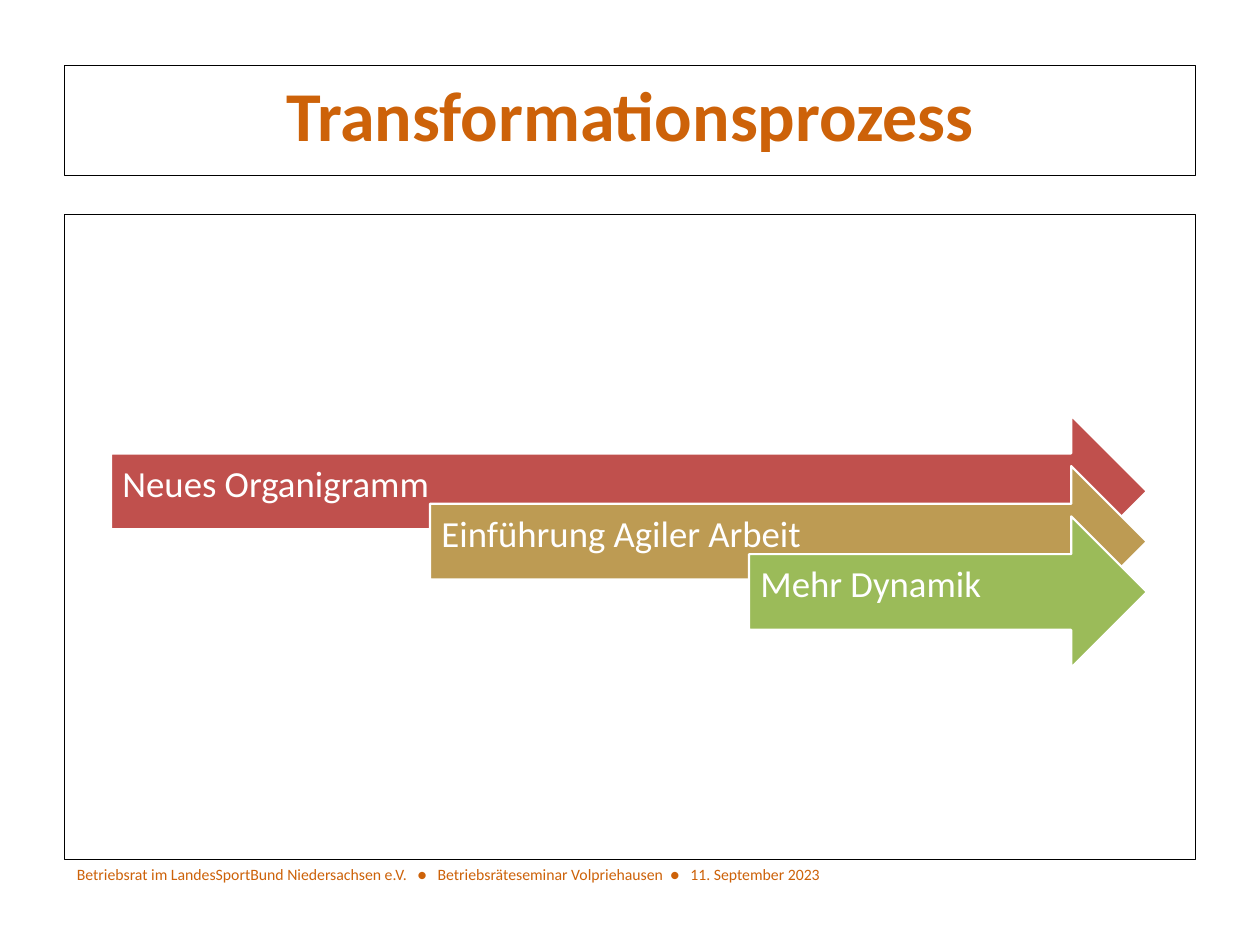
import pptx
import pptx.dml.color
import pptx.enum.shapes
import pptx.enum.text
import pptx.util

Cm = pptx.util.Cm
Pt = pptx.util.Pt
RGBColor = pptx.dml.color.RGBColor
MSO_SHAPE = pptx.enum.shapes.MSO_SHAPE
PP_ALIGN = pptx.enum.text.PP_ALIGN
MSO_ANCHOR = pptx.enum.text.MSO_ANCHOR

WHITE = RGBColor(0xFF, 0xFF, 0xFF)
BLACK = RGBColor(0x00, 0x00, 0x00)
ORANGE = RGBColor(0xCD, 0x62, 0x09)
RED = RGBColor(0xC0, 0x50, 0x4D)
SAND = RGBColor(0xBD, 0x9B, 0x53)
GREEN = RGBColor(0x9B, 0xBB, 0x59)

FONT = "Calibri"
STEPS = [
    ("Neues Organigramm", RED),
    ("Einführung Agiler Arbeit", SAND),
    ("Mehr Dynamik", GREEN),
]
FOOTER = ("Betriebsrat im LandesSportBund Niedersachsen e.V.   ●   "
          "Betriebsräteseminar Volpriehausen  ●   11. September 2023")


def add_filled_shape(shapes, kind, box, fill, line, line_width):
    sp = shapes.add_shape(kind, *box)
    sp.shadow.inherit = False
    sp.fill.solid()
    sp.fill.fore_color.rgb = fill
    sp.line.color.rgb = line
    sp.line.width = Pt(line_width)
    return sp


def write_text(sp, text, size, color, align, anchor, bold=False):
    tf = sp.text_frame
    tf.word_wrap = True
    tf.vertical_anchor = anchor
    p = tf.paragraphs[0]
    p.alignment = align
    r = p.add_run()
    r.text = text
    r.font.name = FONT
    r.font.size = Pt(size)
    r.font.bold = bold
    r.font.color.rgb = color
    return p


def add_frame(slide, box):
    add_filled_shape(slide.shapes, MSO_SHAPE.RECTANGLE, box, WHITE, BLACK, 0.5)


def add_title(slide, box):
    add_frame(slide, box)
    left, top, width, height = box
    tb = slide.shapes.add_textbox(left, top, width, height - Cm(0.25))
    write_text(tb, "Transformationsprozess", 40, ORANGE,
               PP_ALIGN.CENTER, MSO_ANCHOR.TOP, bold=True)


def add_footer(slide, box):
    tb = slide.shapes.add_textbox(*box)
    write_text(tb, FOOTER, 9, ORANGE, PP_ALIGN.LEFT, MSO_ANCHOR.MIDDLE)


def add_arrows(slide, box):
    """Stagger the arrows down and to the right, all tips on the right edge."""
    left, top, width, height = box
    arrow_height = Cm(3.05)
    step_x = Cm(6.43)
    step_y = (height - arrow_height) // (len(STEPS) - 1)
    group = slide.shapes.add_group_shape()
    for i, (label, color) in enumerate(STEPS):
        arrow_box = (left + i * step_x, top + i * step_y,
                     width - i * step_x, arrow_height)
        sp = add_filled_shape(group.shapes, MSO_SHAPE.RIGHT_ARROW, arrow_box,
                              color, WHITE, 1.25)
        tf = sp.text_frame
        tf.margin_left = tf.margin_top = Cm(0.23)
        tf.margin_right = Cm(0.71)
        tf.margin_bottom = Cm(0.48)
        p = write_text(sp, label, 21, WHITE, PP_ALIGN.LEFT, MSO_ANCHOR.MIDDLE)
        p.line_spacing = 0.9


def main():
    prs = pptx.Presentation()
    prs.slide_width = Cm(25.4)
    prs.slide_height = Cm(19.05)
    slide = prs.slides.add_slide(prs.slide_layouts[6])

    left, width = Cm(1.3), Cm(22.8)
    add_footer(slide, (left, Cm(17.32), Cm(17.8), Cm(0.61)))
    add_frame(slide, (left, Cm(4.32), width, Cm(13)))
    add_title(slide, (left, Cm(1.32), width, Cm(2.21)))
    add_arrows(slide, (Cm(2.24), Cm(8.38), Cm(20.88), Cm(5.08)))
    prs.save("out.pptx")


if __name__ == "__main__":
    main()
